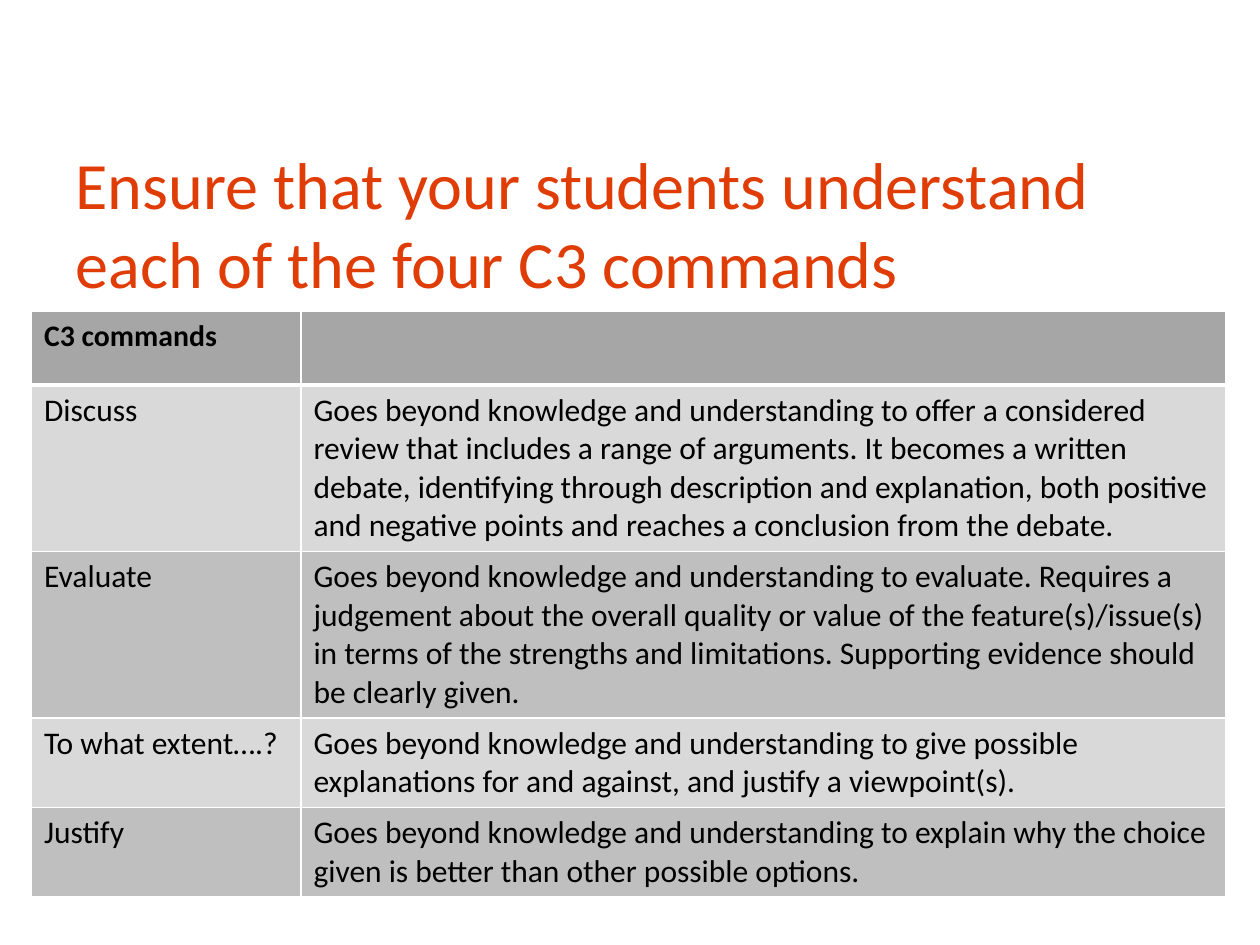
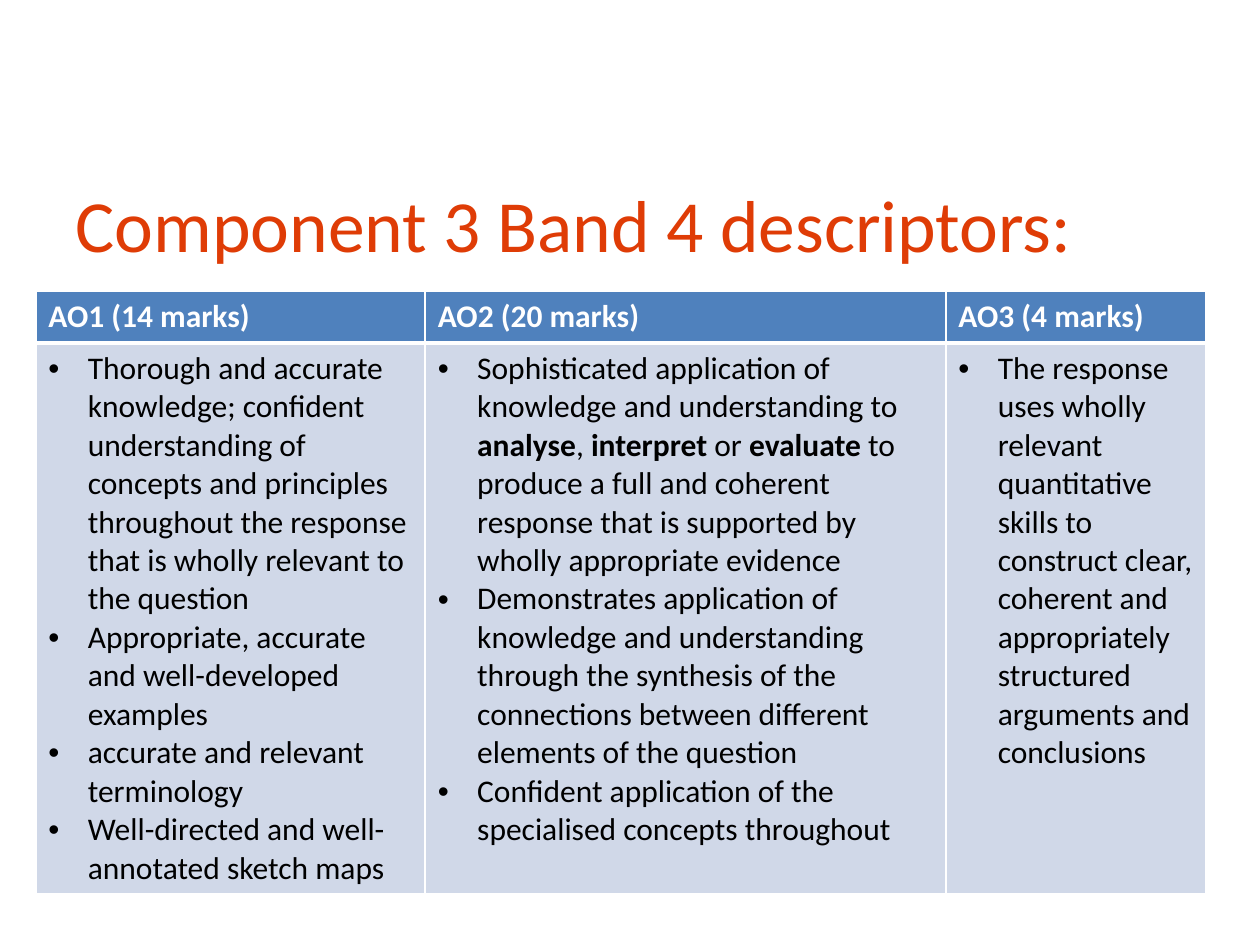
from lxml import etree
from pptx import Presentation
from pptx.dml.color import RGBColor
from pptx.enum.text import MSO_ANCHOR, MSO_AUTO_SIZE, PP_ALIGN
from pptx.oxml.ns import qn
from pptx.util import Pt

LEFT, MIDDLE, NO_FIT = PP_ALIGN.LEFT, MSO_ANCHOR.MIDDLE, MSO_AUTO_SIZE.NONE
TITLE_ONLY = 5
FONT = "Calibri"
BULLET_INDENT = Pt(22.5)

ORANGE = RGBColor(0xDF, 0x3C, 0x06)
BLACK = RGBColor(0x00, 0x00, 0x00)
WHITE = RGBColor(0xFF, 0xFF, 0xFF)
DARK_GREY = RGBColor(0xA6, 0xA6, 0xA6)
MID_GREY = RGBColor(0xBF, 0xBF, 0xBF)
LIGHT_GREY = RGBColor(0xD9, 0xD9, 0xD9)
BLUE = RGBColor(0x4F, 0x81, 0xBD)
PALE_BLUE = RGBColor(0xD0, 0xD8, 0xE8)

# Each cell is a list of paragraphs; words between asterisks are bold.
SLIDES = [
    {
        "title": "Ensure that your students understand each of the four C3 commands",
        "title_size": 37.8,
        "corner": (18, 178),
        "columns": [154, 528.5],
        "heights": [42, 95, 95, 51, 51],
        "header_fill": DARK_GREY, "header_color": BLACK, "header_size": 17,
        "body_fills": [LIGHT_GREY, MID_GREY],
        "bullets": False,
        "rows": [
            [["C3 commands"], []],
            [["Discuss"],
             ["Goes beyond knowledge and understanding to offer a considered review "
              "that includes a range of arguments. It becomes a written debate, "
              "identifying through description and explanation, both positive and "
              "negative points and reaches a conclusion from the debate."]],
            [["Evaluate"],
             ["Goes beyond knowledge and understanding to evaluate. Requires a "
              "judgement about the overall quality or value of the "
              "feature(s)/issue(s) in terms of the strengths and limitations. "
              "Supporting evidence should be clearly given."]],
            [["To what extent….?"],
             ["Goes beyond knowledge and understanding to give possible",
              "explanations for and against, and justify a viewpoint(s)."]],
            [["Justify"],
             ["Goes beyond knowledge and understanding to explain why the choice "
              "given is better than other possible options."]],
        ],
    },
    {
        "title": "Component 3 Band 4 descriptors:",
        "title_size": 42,
        "corner": (20.5, 166.5),
        "columns": [222.5, 297.5, 148.5],
        "heights": [29.5, 314],
        "header_fill": BLUE, "header_color": WHITE, "header_size": 18,
        "body_fills": [PALE_BLUE],
        "bullets": True,
        "rows": [
            [["AO1 (14 marks)"], ["AO2 (20 marks)"], ["AO3 (4 marks)"]],
            [["Thorough and accurate knowledge; confident understanding of concepts "
              "and principles throughout the response that is wholly relevant to "
              "the question",
              "Appropriate, accurate and well-developed examples",
              "accurate and relevant terminology",
              "Well-directed and well-annotated sketch maps"],
             ["Sophisticated application of knowledge and understanding to *analyse*, "
              "*interpret* or *evaluate* to produce a full and coherent response that "
              "is supported by wholly appropriate evidence",
              "Demonstrates application of knowledge and understanding through the "
              "synthesis of the connections between different elements of the question",
              "Confident application of the specialised concepts throughout"],
             ["The response uses wholly relevant quantitative skills to construct "
              "clear, coherent and appropriately structured arguments and conclusions"]],
        ],
    },
]


def add_span(para, text, size, color, bold=False):
    span = para.add_run()
    span.text = text
    span.font.name = FONT
    span.font.size = Pt(size)
    span.font.bold = bold
    span.font.color.rgb = color


def add_title(page, text, size):
    title = page.shapes.title
    title.left, title.top, title.width, title.height = Pt(36), Pt(84), Pt(648), Pt(86.5)
    frame = title.text_frame
    frame.auto_size = NO_FIT
    frame.vertical_anchor = MIDDLE
    para = frame.paragraphs[0]
    para.alignment = LEFT
    add_span(para, text, size, ORANGE)


def add_bullet(para):
    properties = para._p.get_or_add_pPr()
    properties.set("marL", str(BULLET_INDENT))
    properties.set("indent", str(-BULLET_INDENT))
    etree.SubElement(properties, qn("a:buFont")).set("typeface", "Arial")
    etree.SubElement(properties, qn("a:buChar")).set("char", "•")


def set_borders(cell, top, bottom):
    """Draw white cell borders; the side borders are 1 point wide."""
    properties = cell._tc.get_or_add_tcPr()
    for side, width in (("L", 1), ("R", 1), ("T", top), ("B", bottom)):
        line = etree.SubElement(properties, qn(f"a:ln{side}"), w=str(Pt(width)))
        fill = etree.SubElement(line, qn("a:solidFill"))
        etree.SubElement(fill, qn("a:srgbClr")).set("val", str(WHITE))


def fill_cell(cell, paragraphs, size, color, bold, bullets):
    frame = cell.text_frame
    for index, text in enumerate(paragraphs):
        para = frame.add_paragraph() if index else frame.paragraphs[0]
        if bullets:
            add_bullet(para)
        for part, words in enumerate(text.split("*")):
            add_span(para, words, size, color, bold or part % 2 == 1)


def add_table(page, content):
    rows, columns, heights = content["rows"], content["columns"], content["heights"]
    left, top = content["corner"]
    table = page.shapes.add_table(
        len(rows), len(columns), Pt(left), Pt(top), Pt(sum(columns)), Pt(sum(heights))
    ).table
    for column, width in zip(table.columns, columns):
        column.width = Pt(width)
    for row, height in zip(table.rows, heights):
        row.height = Pt(height)

    fills = content["body_fills"]
    for row_number, row in enumerate(rows):
        header = row_number == 0
        for column_number, paragraphs in enumerate(row):
            cell = table.cell(row_number, column_number)
            set_borders(cell, 3 if row_number == 1 else 1, 3 if header else 1)
            cell.fill.solid()
            if header:
                cell.fill.fore_color.rgb = content["header_fill"]
                fill_cell(cell, paragraphs, content["header_size"],
                          content["header_color"], True, False)
            else:
                cell.fill.fore_color.rgb = fills[(row_number - 1) % len(fills)]
                fill_cell(cell, paragraphs, 18, BLACK, False, content["bullets"])


def main():
    deck = Presentation()
    deck.slide_width, deck.slide_height = Pt(720), Pt(540)
    for content in SLIDES:
        page = deck.slides.add_slide(deck.slide_layouts[TITLE_ONLY])
        add_title(page, content["title"], content["title_size"])
        add_table(page, content)
    deck.save("out.pptx")


if __name__ == "__main__":
    main()
